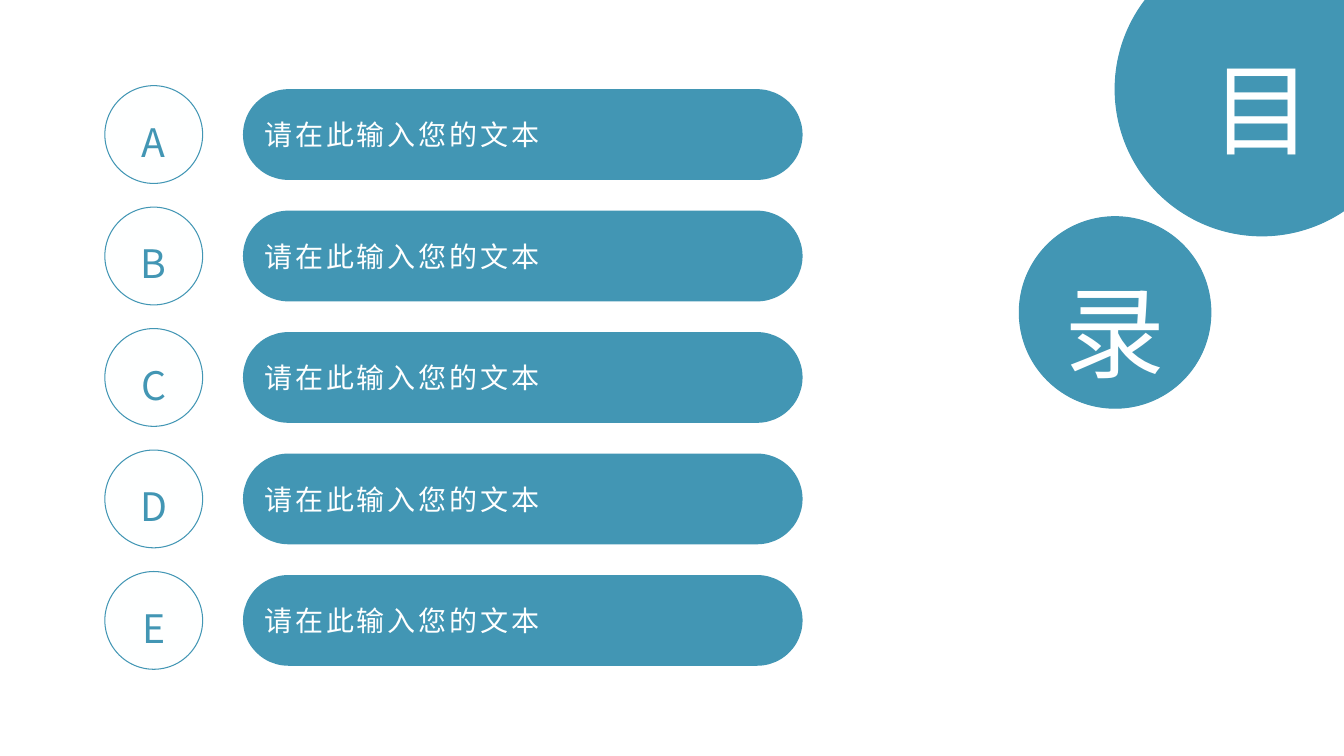
from lxml.etree import SubElement
from pptx import Presentation
from pptx.dml.color import RGBColor
from pptx.enum.shapes import MSO_SHAPE as Shape
from pptx.enum.text import MSO_ANCHOR as Anchor, PP_ALIGN as Align
from pptx.oxml.ns import qn
from pptx.util import Inches, Pt

FONT = "Noto Sans CJK SC"
BLUE, WHITE = "4296B4", "FEFFFF"
ENTRIES = [(letter, "请在此输入您的文本") for letter in "ABCDE"]


def paint(target, color):
    """Give a fill or a font one solid colour."""
    fill = getattr(target, "fill", target)
    fill.solid()
    fill.fore_color.rgb = RGBColor.from_string(color)


def add_label(slide, preset, box, fill, text, size, color, align, inset=0):
    """Add a filled shape with one run of vertically centred text."""
    label = slide.shapes.add_shape(preset, *map(Inches, box))
    label.shadow.inherit = False
    paint(label.fill, fill)
    label.line.fill.background()
    frame = label.text_frame
    frame.word_wrap = True
    frame.vertical_anchor = Anchor.MIDDLE
    frame.margin_left = Inches(inset)
    frame.margin_top = frame.margin_right = frame.margin_bottom = 0
    paragraph = frame.paragraphs[0]
    paragraph.alignment = align
    run = paragraph.add_run()
    run.text = text
    run.font.size = Pt(size)
    paint(run.font, color)
    run.font.name = FONT
    SubElement(run.font._element, qn("a:ea"), typeface=FONT)
    return label, paragraph, run


def add_disc(slide, left, top, diameter, fill, text, size, color):
    disc, paragraph, _ = add_label(
        slide, Shape.OVAL, (left, top, diameter, diameter),
        fill, text, size, color, Align.CENTER)
    paragraph.line_spacing = 1.3
    paint(disc.line, BLUE)
    disc.line.width = Pt(0.75)


def add_bar(slide, box, text):
    bar, _, run = add_label(slide, Shape.ROUNDED_RECTANGLE, box,
                            BLUE, text, 20, WHITE, Align.LEFT, 0.08)
    bar.adjustments[0] = 0.5
    run.font._element.set("spc", "200")


def add_contents(slide, left, top, width, height):
    """Spread the entries evenly over the box, each a lettered disc and a bar."""
    disc, bar_height, bar_offset = 0.97, 0.9, 1.37
    pitch = (height - disc) / (len(ENTRIES) - 1)
    for row, (letter, entry) in enumerate(ENTRIES):
        y = top + row * pitch
        add_bar(slide, (left + bar_offset, y + (disc - bar_height) / 2,
                        width - bar_offset, bar_height), entry)
        add_disc(slide, left, y, disc, WHITE, letter, 28, BLUE)


def add_title(slide, left, top, width, height):
    """Set the two title characters in discs at opposite corners of the box."""
    large, small = 2.91, 1.9
    add_disc(slide, left + width - large, top, large, BLUE, "目", 72, WHITE)
    add_disc(slide, left, top + height - small, small, BLUE, "录", 72, WHITE)


def main():
    deck = Presentation()
    deck.slide_width, deck.slide_height = Inches(13.33), Inches(7.5)
    slide = deck.slides.add_slide(deck.slide_layouts[6])
    add_contents(slide, 1.04, 0.85, 6.92, 5.79)
    add_title(slide, 10.11, -0.57, 3.86, 4.62)
    deck.save("out.pptx")


if __name__ == "__main__":
    main()
